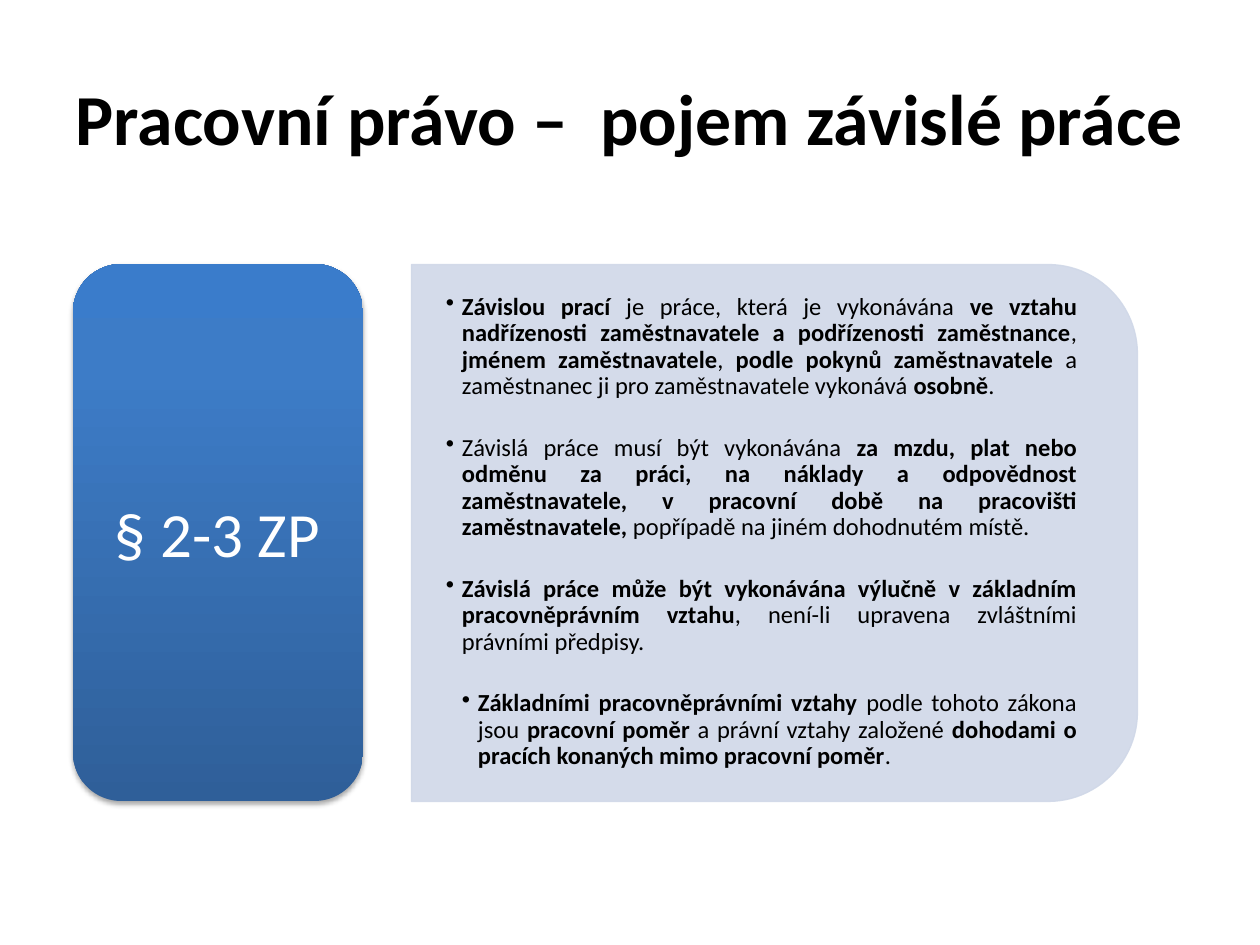
from lxml import etree
from pptx import Presentation, util as u
from pptx.dml.color import RGBColor
from pptx.enum import shapes, text
from pptx.oxml.ns import nsdecls, qn
from pptx.oxml import parse_xml

PX = 914400 // 126
FONT = "Calibri"
COLORS = {"text": "000000", "label": "FFFFFF", "panel": "D0D8E8", "shadow": "000000"}
GRADIENT = [(0, "2F5F99"), (80, "3D7CC7"), (100, "3A7CCB")]

TITLE = "Pracovní právo –  pojem závislé práce"
LABEL = "§ 2-3 ZP"
# Each paragraph: level, then runs of (text, bold)
PARAGRAPHS = [
    (1, [("Závislou prací ", True),
         ("je práce, která je vykonávána ", False),
         ("ve vztahu nadřízenosti zaměstnavatele a podřízenosti zaměstnance", True),
         (", ", False),
         ("jménem zaměstnavatele", True),
         (", ", False),
         ("podle pokynů zaměstnavatele ", True),
         ("a zaměstnanec ji pro zaměstnavatele vykonává ", False),
         ("osobně", True),
         (".", False)]),
    (1, [("Závislá práce musí být vykonávána ", False),
         ("za mzdu, plat nebo odměnu za práci, na náklady a odpovědnost "
          "zaměstnavatele, v pracovní době na pracovišti zaměstnavatele,", True),
         (" popřípadě na jiném dohodnutém místě.", False)]),
    (1, [("Závislá práce může být vykonávána výlučně v základním "
          "pracovněprávním vztahu", True),
         (", není-li upravena zvláštními právními předpisy.", False)]),
    (2, [("Základními pracovněprávními vztahy ", True),
         ("podle tohoto zákona jsou ", False),
         ("pracovní poměr ", True),
         ("a právní vztahy založené ", False),
         ("dohodami o pracích konaných mimo pracovní poměr", True),
         (".", False)]),
]

# left, top, width, height in px
TITLE_BOX = (63, 38, 1134, 158)
PANEL = (412, 264, 726, 537)
PANEL_TEXT = (412, 290, 699, 484)
BADGE = (73, 264, 290, 537)
BADGE_TEXT = (87, 278, 261, 508)
INDENT = 16


def emu(box):
    return [v * PX for v in box]


def style(r, size, color, bold=False):
    r.font.name, r.font.size, r.font.bold = FONT, u.Pt(size), bold
    r.font.color.rgb = RGBColor.from_string(COLORS[color])


def add_text_frame(s, box, mx, my):
    tf = s.shapes.add_textbox(*emu(box)).text_frame
    tf.word_wrap = True
    tf.vertical_anchor = text.MSO_ANCHOR.MIDDLE
    tf.margin_left = tf.margin_right = mx * PX
    tf.margin_top = tf.margin_bottom = my * PX
    return tf


def add_line(s, box, mx, my, words, size, color, bold=False):
    """Add a text box holding one centred line."""
    p = add_text_frame(s, box, mx, my).paragraphs[0]
    p.text = words
    p.alignment = text.PP_ALIGN.CENTER
    style(p.runs[0], size, color, bold)


def add_panel(s):
    """Add the panel as a top-rounded rectangle turned a quarter to the right."""
    left, top, w, h = PANEL
    shift = (w - h) // 2
    sp = s.shapes.add_shape(shapes.MSO_SHAPE.ROUND_2_SAME_RECTANGLE,
                            *emu((left + shift, top - shift, h, w)))
    sp.rotation = 90
    sp.shadow.inherit = False
    sp.line.width = u.Pt(0.75)
    for part in (sp.fill, sp.line.fill):
        part.solid()
        part.fore_color.rgb = RGBColor.from_string(COLORS["panel"])
    for clr in sp._element.spPr.iter(qn("a:srgbClr")):
        etree.SubElement(clr, qn("a:alpha"), val="90000")


def add_badge(s):
    sp = s.shapes.add_shape(shapes.MSO_SHAPE.ROUNDED_RECTANGLE, *emu(BADGE))
    sp.shadow.inherit = False
    sp.line.fill.background()
    spPr = sp._element.spPr
    stops = "".join(f'<a:gs pos="{pos * 1000}"><a:srgbClr val="{c}"/></a:gs>'
                    for pos, c in GRADIENT)
    spPr.find(qn("a:prstGeom")).addnext(parse_xml(
        f'<a:gradFill {nsdecls("a")} rotWithShape="1"><a:gsLst>{stops}</a:gsLst>'
        '<a:lin ang="16200000" scaled="0"/></a:gradFill>'))
    spPr.find(qn("a:effectLst")).append(parse_xml(
        f'<a:outerShdw {nsdecls("a")} blurRad="{u.Pt(3.1)}" dist="{u.Pt(1.8)}" '
        f'dir="5400000" rotWithShape="0"><a:srgbClr val="{COLORS["shadow"]}">'
        '<a:alpha val="35000"/></a:srgbClr></a:outerShdw>'))


def add_bullets(s):
    tf = add_text_frame(s, PANEL_TEXT, 34, 18)
    for i, (level, runs) in enumerate(PARAGRAPHS):
        p = tf.paragraphs[0] if i == 0 else tf.add_paragraph()
        pPr = p._p.get_or_add_pPr()
        pPr.set("marL", str(level * INDENT * PX))
        pPr.set("indent", str(-INDENT * PX))
        etree.SubElement(pPr, qn("a:buChar"), char="•")
        p.level = level
        p.alignment = text.PP_ALIGN.JUSTIFY
        p.line_spacing = 0.9
        p.space_before = u.Pt(20 if i else 0)
        for words, bold in runs:
            r = p.add_run()
            r.text = words
            style(r, 14, "text", bold)


def main():
    prs = Presentation()
    prs.slide_width, prs.slide_height = u.Inches(10), u.Inches(7.5)
    s = prs.slides.add_slide(prs.slide_layouts[6])
    add_line(s, TITLE_BOX, 12, 6, TITLE, 41, "text", True)
    add_panel(s)
    add_bullets(s)
    add_badge(s)
    add_line(s, BADGE_TEXT, 19, 9, LABEL, 36, "label")
    prs.save("out.pptx")


if __name__ == "__main__":
    main()
